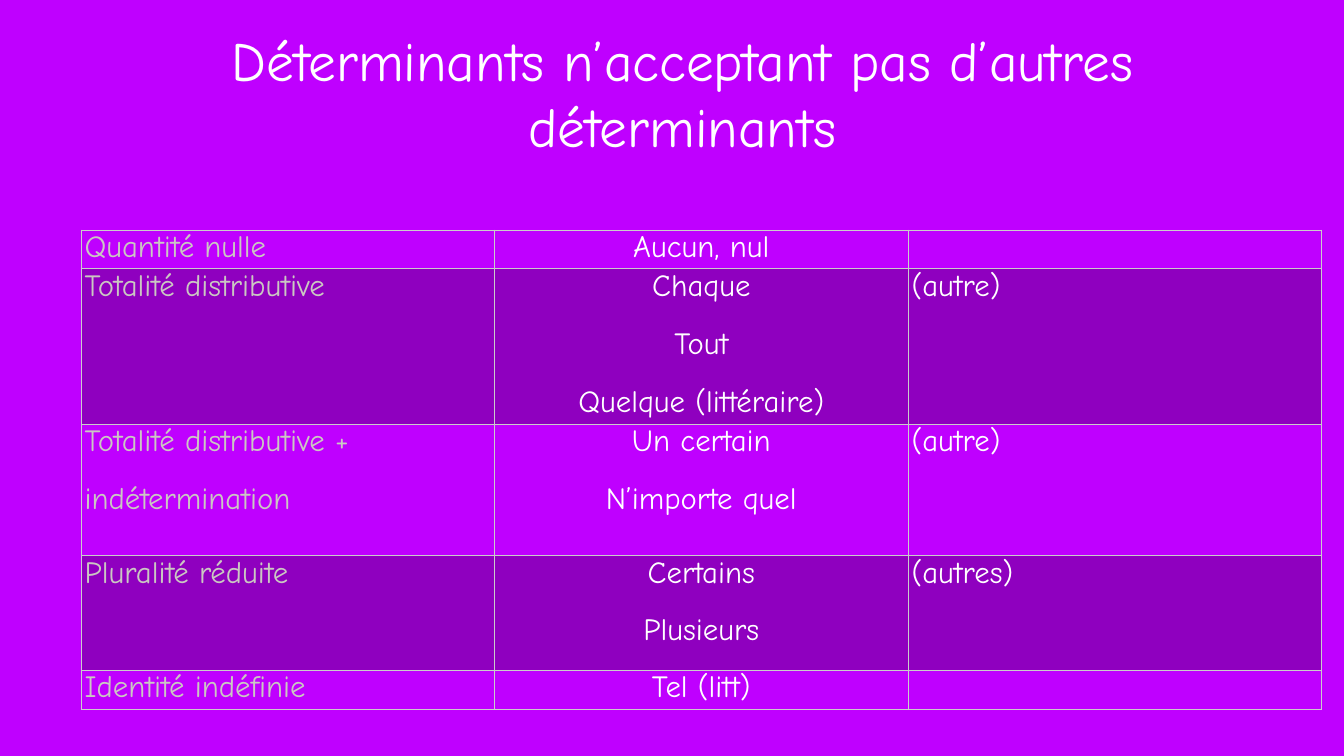
import dataclasses
import pptx
import pptx.dml.color
import pptx.enum.text
import pptx.oxml
import pptx.oxml.ns
import pptx.util

Rgb = pptx.dml.color.RGBColor.from_string
Pt = pptx.util.Pt
Inches = pptx.util.Inches
Align = pptx.enum.text.PP_ALIGN


@dataclasses.dataclass(frozen=True)
class Theme:
    font: str = "Comic Neue"
    back: str = "BF00FF"
    text: str = "FFFFFF"
    label: str = "CBC8C2"
    rule: str = "CBCBCB"
    band: str = "000000"
    alpha: int = 25
    title: int = 79
    body: int = 44
    gap: int = 32
    line: float = 0.5


class Page:
    COLS = 65
    ROWS = 60

    def __init__(self, deck, theme):
        self.theme = theme
        self.wide = deck.slide_width / self.COLS
        self.high = deck.slide_height / self.ROWS
        self.slide = deck.slides.add_slide(deck.slide_layouts[6])
        fill = self.slide.background.fill
        fill.solid()
        fill.fore_color.rgb = Rgb(theme.back)

    def area(self, col, row, cols, rows):
        return (round(col * self.wide), round(row * self.high),
                round(cols * self.wide), round(rows * self.high))

    def label(self, frame, text, size, color, align, gap=0):
        frame.text = text
        for index, para in enumerate(frame.paragraphs):
            para.alignment = align
            if index and gap:
                para.space_before = Pt(gap)
            for run in para.runs:
                run.font.name = self.theme.font
                run.font.size = Pt(size)
                run.font.color.rgb = Rgb(color)

    def title(self, text, *area):
        frame = self.slide.shapes.add_textbox(*self.area(*area)).text_frame
        frame.word_wrap = True
        frame.vertical_anchor = pptx.enum.text.MSO_ANCHOR.MIDDLE
        frame.margin_left = frame.margin_right = Inches(0.06)
        frame.margin_top = frame.margin_bottom = Inches(0.06)
        self.label(frame, text, self.theme.title, self.theme.text, Align.CENTER)

    def border(self, cell):
        props = cell._tc.get_or_add_tcPr()
        space = pptx.oxml.ns.nsdecls("a")
        for side in "LRTB":
            props.append(pptx.oxml.parse_xml(
                f'<a:ln{side} {space} w="{Pt(self.theme.line)}"><a:solidFill>'
                f'<a:srgbClr val="{self.theme.rule}"/></a:solidFill></a:ln{side}>'))

    def shade(self, cell, band):
        if not band:
            cell.fill.background()
            return
        cell.fill.solid()
        cell.fill.fore_color.rgb = Rgb(self.theme.band)
        color = cell._tc.tcPr.find(pptx.oxml.ns.qn("a:solidFill"))[0]
        color.append(pptx.oxml.parse_xml(
            f'<a:alpha {pptx.oxml.ns.nsdecls("a")} val="{self.theme.alpha * 1000}"/>'))

    def table(self, data, col, row, cols, rows):
        looks = ((self.theme.label, Align.LEFT),
                 (self.theme.text, Align.CENTER),
                 (self.theme.text, Align.LEFT))
        area = self.area(col, row, cols * len(looks), sum(rows))
        grid = self.slide.shapes.add_table(len(data), len(looks), *area).table
        grid.first_row = grid.horz_banding = False
        for column in grid.columns:
            column.width = round(cols * self.wide)
        for index, texts in enumerate(data):
            grid.rows[index].height = round(rows[index] * self.high)
            for place, (text, (color, align)) in enumerate(zip(texts, looks)):
                cell = grid.cell(index, place)
                cell.margin_left = cell.margin_right = Inches(0.07)
                cell.margin_top = cell.margin_bottom = 0
                self.border(cell)
                self.shade(cell, index % 2)
                self.label(cell.text_frame, text, self.theme.body, color,
                           align, self.theme.gap)


def main():
    deck = pptx.Presentation()
    deck.slide_width = Inches(26.67)
    deck.slide_height = Inches(15)
    page = Page(deck, Theme())
    page.title("Déterminants n’acceptant pas d’autres déterminants",
               4.73, 1.56, 56.54, 11.56)
    data = (
        ("Quantité nulle", "Aucun, nul", ""),
        ("Totalité distributive", "Chaque\nTout\nQuelque (littéraire)", "(autre)"),
        ("Totalité distributive +\nindétermination",
         "Un certain\nN’importe quel", "(autre)"),
        ("Pluralité réduite", "Certains\nPlusieurs", "(autres)"),
        ("Identité indéfinie", "Tel (litt)", ""),
    )
    page.table(data, 3.92, 18.24, 20, (3.08, 9.28, 10.4, 9.12, 3.08))
    deck.save("out.pptx")


if __name__ == "__main__":
    main()
